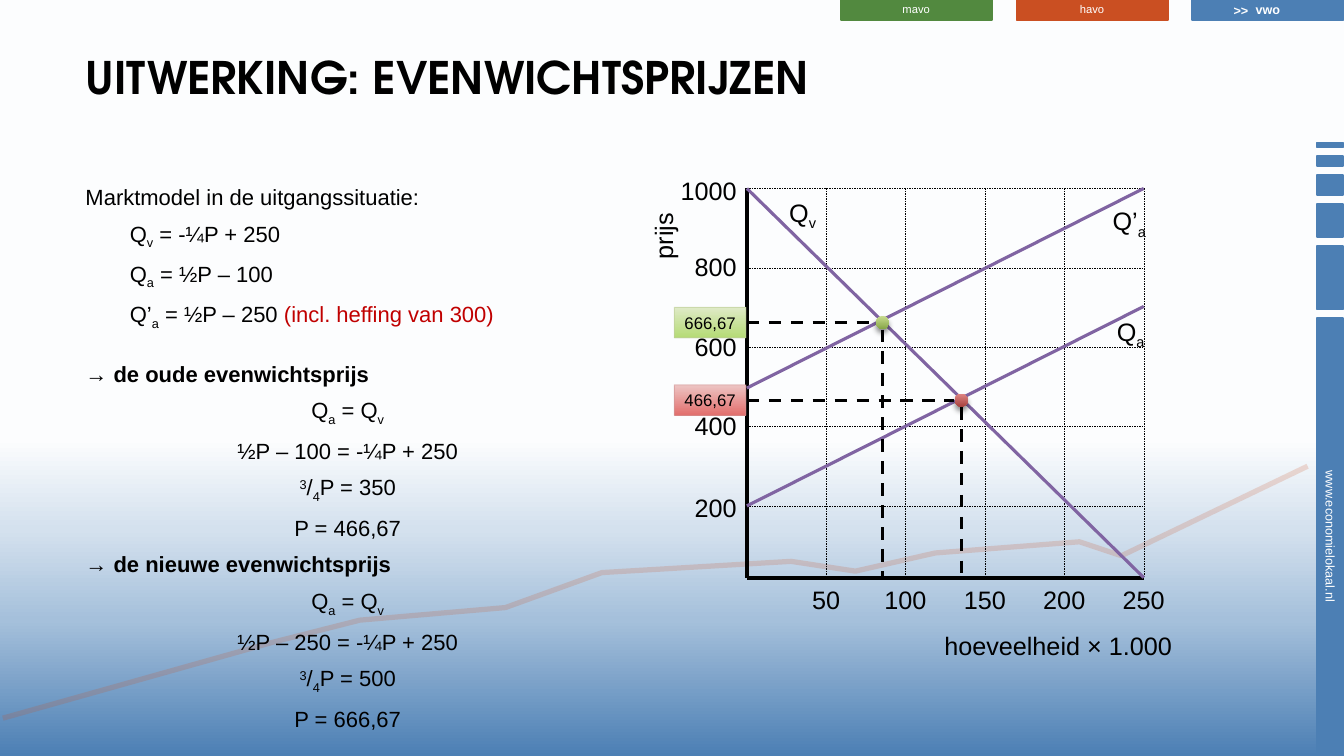
from dataclasses import dataclass

from lxml.etree import SubElement
from pptx import Presentation
from pptx.dml.color import RGBColor
from pptx.enum.dml import MSO_LINE
from pptx.enum.shapes import MSO_CONNECTOR, MSO_SHAPE
from pptx.enum.text import MSO_ANCHOR, MSO_AUTO_SIZE, PP_ALIGN
from pptx.oxml.ns import qn
from pptx.util import Pt


@dataclass(frozen=True)
class Theme:
    font: str = "Arial"
    title_font: str = "TeX Gyre Adventor"
    black: str = "000000"
    white: str = "FFFFFF"
    blue: str = "4C7FB4"
    orange: str = "CA4F22"
    green: str = "52893F"
    red: str = "C00000"
    purple: str = "8064A2"
    sky: tuple = ((0, "4C7FB4"), (18, "A5C0DB"), (30, "D4E1EE"), (42, "FCFDFE"), (50, "FFFFFF"))
    # Equilibrium colours: dot gradient, label gradient, label border
    new_price: tuple = (("C9DD90", "86A547"), ("DFEAC7", "B5DB75"), "BECE99")
    old_price: tuple = (("E18785", "A7423F"), ("EDC5C4", "E26E6C"), "D19595")
    title_size: float = 32
    body_size: float = 15.7
    axis_size: float = 18
    price_size: float = 12
    tab_size: float = 8
    bar_size: float = 9


T = Theme()
# Plot area and grid spacing
LEFT, TOP, RIGHT, BOTTOM, STEP = 533.5, 134.6, 817, 412.6, 56.7


def rgb(value):
    return RGBColor.from_string(value)


def write(p, text, *, size=T.axis_size, color=T.black, bold=False, font=T.font):
    """Add runs split at |; a leading _ means subscript, ^ superscript."""
    for part in text.split("|"):
        base = {"_": -25000, "^": 30000}.get(part[0])
        r = p.add_run()
        r.text = part[1:] if base else part
        r.font.name, r.font.size, r.font.bold = font, Pt(size), bold
        r.font.color.rgb = rgb(color)
        if base:
            r.font._element.set("baseline", str(base))


def set_alpha(element, percent):
    SubElement(element, qn("a:alpha")).set("val", str(percent * 1000))


def set_gradient(fill, element, stops, angle):
    fill.gradient()
    fill.gradient_angle = angle
    stop_list = next(element.iter(qn("a:gsLst")))
    for stop in list(stop_list):
        stop_list.remove(stop)
    for position, color in stops:
        stop = SubElement(stop_list, qn("a:gs"), pos=str(position * 1000))
        SubElement(stop, qn("a:srgbClr"), val=color)


def set_line(sp, color, width, alpha=None):
    sp.line.color.rgb = rgb(color)
    sp.line.width = Pt(width)
    if alpha:
        set_alpha(next(sp.element.spPr.find(qn("a:ln")).iter(qn("a:srgbClr"))), alpha)


def add_shape(slide, kind, x, y, w, h):
    sp = slide.shapes.add_shape(kind, Pt(x), Pt(y), Pt(w), Pt(h))
    sp.shadow.inherit = False
    return sp


def add_bar(slide, x, y, w, h, color, text="", rotation=0, **fmt):
    sp = add_shape(slide, MSO_SHAPE.RECTANGLE, x, y, w, h)
    sp.rotation = rotation
    sp.fill.solid()
    sp.fill.fore_color.rgb = rgb(color)
    set_line(sp, color, 1.25)
    if text:
        tf = sp.text_frame
        tf.margin_top, tf.margin_bottom = 0, Pt(1)
        tf.vertical_anchor = MSO_ANCHOR.MIDDLE
        tf.paragraphs[0].alignment = PP_ALIGN.CENTER
        write(tf.paragraphs[0], text, color=T.white, **fmt)


def add_label(slide, text, x, y, w, h=29, rotation=0, **fmt):
    sp = slide.shapes.add_textbox(Pt(x), Pt(y), Pt(w), Pt(h))
    sp.rotation = rotation
    sp.text_frame.word_wrap = False
    sp.text_frame.auto_size = MSO_AUTO_SIZE.SHAPE_TO_FIT_TEXT
    write(sp.text_frame.paragraphs[0], text, **fmt)


def add_line(slide, x1, y1, x2, y2, width, color=T.black, dashed=False):
    s = slide.shapes.add_connector(MSO_CONNECTOR.STRAIGHT, Pt(x1), Pt(y1), Pt(x2), Pt(y2))
    set_line(s, color, width)
    if dashed:
        s.line.dash_style = MSO_LINE.DASH
    SubElement(s.element.spPr, qn("a:effectLst"))


def add_decoration(slide):
    # Side bars, growing downwards
    y = 101.9
    for length in (3.6, 7.2, 14.4, 23.8, 45.4, 311.8):
        text = "www.economielokaal.nl" if length > 300 else ""
        add_bar(slide, 950 - length / 2, y + length / 2 - 9.4, length, 18.7, T.blue,
                text, rotation=90, size=T.bar_size)
        y += length + 6.2
    # School level tabs
    tabs = (("mavo", T.green, T.tab_size), ("havo", T.orange, T.tab_size), ("vwo", T.blue, T.bar_size))
    for i, (text, color, size) in enumerate(tabs):
        add_bar(slide, 600.5 + 125.6 * i, 0, 108, 14.4, color, text, size=size, bold=text == "vwo")
    add_label(slide, ">>", 874, -1.4, 25.2, 18, size=T.bar_size, color=T.white, bold=True)
    # Faint trend line
    points = ((2, 513.4), (194.4, 459.4), (257, 442.8), (360.7, 434.2), (429.8, 409), (565.2, 401),
              (611.3, 407.5), (668.2, 395.3), (771, 386.6), (800.6, 396.7), (933.8, 332.6))
    builder = slide.shapes.build_freeform(*points[0], scale=Pt(1))
    builder.add_line_segments(points[1:], close=False)
    sp = builder.convert_to_shape()
    sp.shadow.inherit = False
    sp.fill.background()
    set_line(sp, T.orange, 3.75, alpha=19)


def add_title(slide, text):
    sp = slide.shapes.title
    sp.left, sp.top, sp.width, sp.height = Pt(54), Pt(36), Pt(721.4), Pt(64)
    sp.text_frame.vertical_anchor = MSO_ANCHOR.TOP
    p = sp.text_frame.paragraphs[0]
    p.alignment, p.line_spacing = PP_ALIGN.LEFT, 0.9
    write(p, text, size=T.title_size, bold=True, font=T.title_font)


def add_solution(slide):
    tf = slide.shapes.add_textbox(Pt(54), Pt(127.4), Pt(388.8), Pt(370.8)).text_frame
    tf.word_wrap = True

    def line(text, before=4, indent=0, center=False, bold=False):
        p = tf.add_paragraph() if tf.text else tf.paragraphs[0]
        p.space_before, p.space_after = Pt(before), Pt(3.4)
        p.alignment = PP_ALIGN.CENTER if center else PP_ALIGN.LEFT
        p._p.get_or_add_pPr().set("marL", str(Pt(indent)))
        write(p, text, size=T.body_size, bold=bold)
        return p

    # Market model
    line("Marktmodel in de uitgangssituatie:", before=0)
    for text in ("Q|_v| = -¼P + 250", "Q|_a| = ½P – 100", "Q’|_a| = ½P – 250 "):
        p = line(text, indent=31.7)
    write(p, "(incl. heffing van 300)", size=T.body_size, color=T.red)
    # Old and new equilibrium price
    for name, before, constant, total, price in (("oude", 17.5, 100, 350, "466,67"),
                                                 ("nieuwe", 4, 250, 500, "666,67")):
        line(f"→ de {name} evenwichtsprijs", before=before, bold=True)
        for text in ("Q|_a| = Q|_v", f"½P – {constant} = -¼P + 250",
                     f"^3|/|_4|P = {total}", f"P = {price}"):
            line(text, center=True)


def add_axes(slide):
    add_line(slide, LEFT, TOP, LEFT, BOTTOM, 3)
    add_line(slide, RIGHT, BOTTOM, LEFT, BOTTOM, 3)
    for i in range(5):
        y, x = TOP + STEP * i, LEFT + STEP * (i + 1)
        add_line(slide, LEFT, y, RIGHT, y, 0.25, dashed=True)
        add_line(slide, x, TOP, x, BOTTOM, 0.25, dashed=True)
        # Tick labels
        for text, is_price in ((str(1000 - 200 * i), True), (str(50 * (i + 1)), False)):
            w = 14.4 + 10 * len(text)
            if is_price:
                add_label(slide, text, LEFT - w, y - (13 if i in (0, 4) else 15), w)
            else:
                add_label(slide, text, x - w / 2, 414, w)
    add_label(slide, "hoeveelheid × 1.000", 667.4, 447, 178.6)
    add_label(slide, "prijs", 450, 154, 47.5, rotation=270)


def add_equilibrium(slide, x, y, price, colors):
    dot_colors, label_colors, border = colors
    add_line(slide, LEFT, y, x - 5, y, 2.25, dashed=True)
    add_line(slide, x, y + 5, x, BOTTOM, 2.25, dashed=True)
    # Dot with shadow
    dot = add_shape(slide, MSO_SHAPE.OVAL, x - 4.7, y - 4.7, 9.4, 9.4)
    set_gradient(dot.fill, dot.element, zip((0, 100), dot_colors), 270)
    dot.line.fill.background()
    shadow = SubElement(dot.element.spPr.find(qn("a:effectLst")), qn("a:outerShdw"),
                        blurRad=str(Pt(4)), dist=str(Pt(3)), dir="5400000", rotWithShape="0")
    set_alpha(SubElement(shadow, qn("a:srgbClr"), val=T.black), 46)
    # Price on the axis
    tag = add_shape(slide, MSO_SHAPE.RECTANGLE, 481.7, y - 10.9, 51.1, 21.8)
    set_gradient(tag.fill, tag.element, zip((0, 100), label_colors), 270)
    set_line(tag, border, 0.75, alpha=60)
    tag.text_frame.word_wrap = False
    tag.text_frame.auto_size = MSO_AUTO_SIZE.SHAPE_TO_FIT_TEXT
    tag.text_frame.paragraphs[0].alignment = PP_ALIGN.CENTER
    write(tag.text_frame.paragraphs[0], price, size=T.price_size)


def main():
    prs = Presentation()
    prs.slide_width, prs.slide_height = Pt(960), Pt(540)
    slide = prs.slides.add_slide(prs.slide_layouts[5])
    set_gradient(slide.background.fill, slide.element, T.sky, 90)
    add_decoration(slide)
    add_title(slide, "UITWERKING: EVENWICHTSPRIJZEN")
    add_solution(slide)
    add_axes(slide)
    # Demand and supply curves: text, label place and width, start and end height
    for text, x, y, w, start, end in (("Q|_v", 556.6, 137.5, 34.6, TOP, BOTTOM),
                                      ("Q|_a", 790.6, 222.5, 35.3, 361.4, 218.9),
                                      ("Q’|_a", 787.7, 143.3, 39.6, 277.2, TOP)):
        add_line(slide, LEFT, start, RIGHT, end, 2.25, T.purple)
        add_label(slide, text, x, y, w)
    add_equilibrium(slide, 686.7, 285.8, "466,67", T.old_price)
    add_equilibrium(slide, 630.5, 230.4, "666,67", T.new_price)
    prs.save("out.pptx")


if __name__ == "__main__":
    main()
